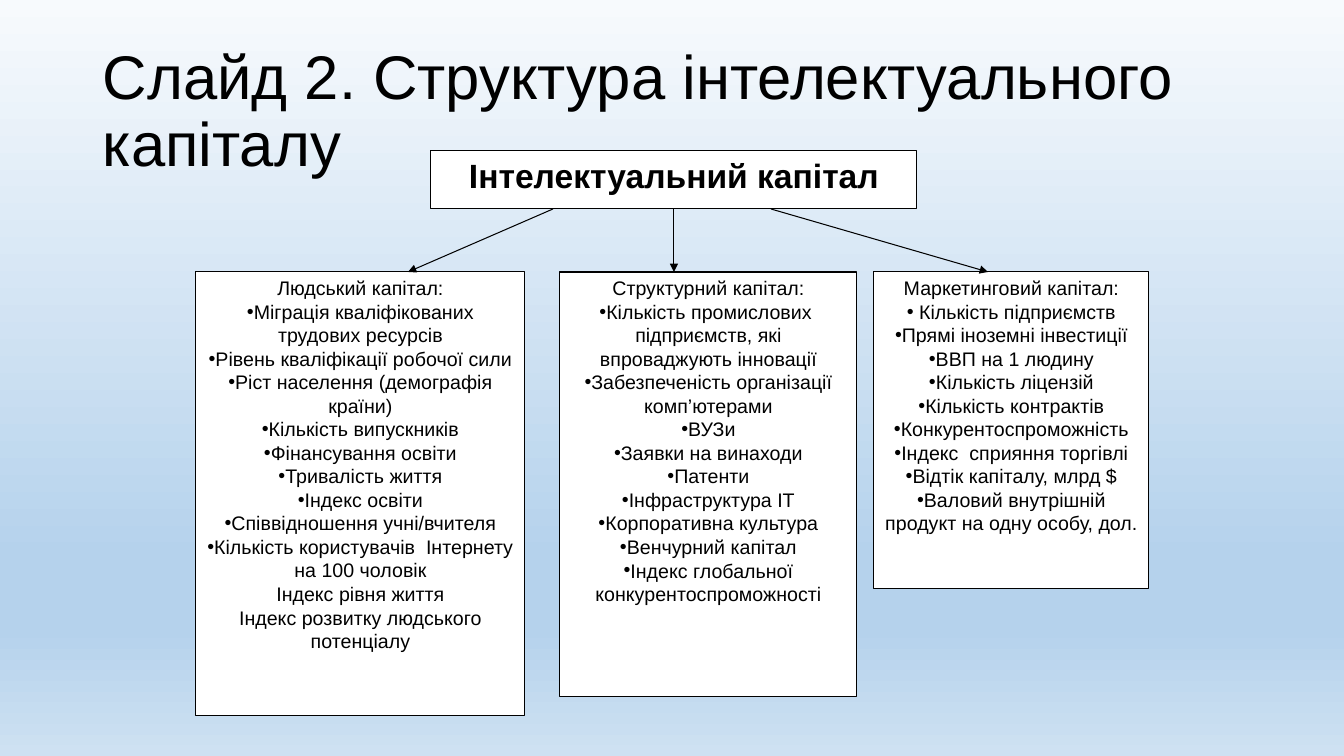
from dataclasses import dataclass

from lxml import etree
from pptx import Presentation
from pptx.dml.color import RGBColor
from pptx.enum.dml import MSO_THEME_COLOR
from pptx.enum.shapes import MSO_CONNECTOR, MSO_SHAPE
from pptx.enum.text import MSO_ANCHOR, PP_ALIGN
from pptx.oxml.ns import qn
from pptx.shapes.autoshape import Shape
from pptx.shapes.connector import Connector
from pptx.slide import Slide
from pptx.text.text import _Paragraph as Paragraph
from pptx.util import Emu, Pt

RECTANGLE = MSO_SHAPE.RECTANGLE
STRAIGHT = MSO_CONNECTOR.STRAIGHT
CENTER, LEFT = PP_ALIGN.CENTER, PP_ALIGN.LEFT
TOP, MIDDLE = MSO_ANCHOR.TOP, MSO_ANCHOR.MIDDLE
BOTTOM_SITE = 2

EMU_PER_PX = 914400 / 100.8
FONT = "Arial"
COLORS = {
    "ink": "000000",
    "box": "FFFFFF",
    "sky_top": "F7FAFD",
    "sky_deep": "B5D2EC",
    "sky_bottom": "CEE1F2",
}
BACKGROUND_STOPS = [(0, "sky_top"), (74, "sky_deep"), (83, "sky_deep"), (100, "sky_bottom")]

ROOT_TOP, ROOT_HEIGHT = 151, 58
ROOT_BOTTOM = ROOT_TOP + ROOT_HEIGHT
BRANCH_TOP = 272


@dataclass(frozen=True)
class Branch:
    """A kind of capital: its box, the arrow leading to it and its indicators."""
    left: int
    width: int
    height: int
    arrow_from: int
    arrow_to: int
    heading: str
    bullets: list[str]
    plain: tuple[str, ...] = ()


BRANCHES = [
    Branch(196, 329, 444, 553, 408, "Людський капітал:", [
        "Міграція кваліфікованих трудових ресурсів",
        "Рівень кваліфікації робочої сили",
        "Ріст населення (демографія країни)",
        "Кількість випускників",
        "Фінансування освіти",
        "Тривалість життя",
        "Індекс освіти",
        "Співвідношення учні/вчителя",
        "Кількість користувачів  Інтернету на 100 чоловік",
    ], ("Індекс рівня життя", "Індекс розвитку людського\vпотенціалу")),
    Branch(560, 297, 425, 674, 674, "Структурний капітал:", [
        "Кількість промислових  підприємств, які впроваджують інновації",
        "Забезпеченість організації комп’ютерами",
        "ВУЗи",
        "Заявки на винаходи",
        "Патенти",
        "Інфраструктура ІТ",
        "Корпоративна культура",
        "Венчурний капітал",
        "Індекс глобальної\vконкурентоспроможності",
    ]),
    Branch(874, 275, 317, 771, 988, "Маркетинговий капітал:", [
        " Кількість підприємств",
        "Прямі іноземні інвестиції",
        "ВВП на 1 людину",
        "Кількість ліцензій",
        "Кількість контрактів",
        "Конкурентоспроможність",
        "Індекс  сприяння торгівлі",
        "Відтік капіталу, млрд $",
        "Валовий внутрішній продукт на одну особу, дол.",
    ]),
]


def px(length: int) -> Emu:
    return Emu(round(length * EMU_PER_PX))


def color(name: str) -> RGBColor:
    return RGBColor.from_string(COLORS[name])


def paint_background(slide: Slide) -> None:
    fill = slide.background.fill
    fill.gradient()
    fill.gradient_angle = 270
    stop_list = next(slide.element.iter(qn("a:gsLst")))
    for stop in list(stop_list):
        stop_list.remove(stop)
    for percent, name in BACKGROUND_STOPS:
        stop = etree.SubElement(stop_list, qn("a:gs"), pos=str(percent * 1000))
        etree.SubElement(stop, qn("a:srgbClr"), val=COLORS[name])


def add_bullet(paragraph: Paragraph) -> None:
    properties = paragraph._p.get_or_add_pPr()
    properties.set("marL", "0")
    properties.set("indent", "0")
    etree.SubElement(properties, qn("a:buFont"), typeface=FONT)
    etree.SubElement(properties, qn("a:buChar"), char="•")


def write(shape: Shape, lines: list[tuple[str, bool]], size: int,
          align: PP_ALIGN = CENTER, bold: bool = False) -> None:
    """Fill the shape with (text, has bullet) lines."""
    frame = shape.text_frame
    frame.word_wrap = True
    for index, (text, bulleted) in enumerate(lines):
        paragraph = frame.paragraphs[0] if index == 0 else frame.add_paragraph()
        paragraph.text = text
        if bulleted:
            add_bullet(paragraph)
        paragraph.alignment = align
        font = paragraph.font
        font.name, font.size, font.bold = FONT, Pt(size), bold
        font.color.rgb = color("ink")


def add_title(slide: Slide, text: str) -> None:
    title = slide.shapes.add_textbox(px(93), px(40), px(1159), px(146))
    write(title, [(text, False)], 44, LEFT)
    title.text_frame.vertical_anchor = MIDDLE
    title.text_frame.paragraphs[0].line_spacing = 0.9


def add_box(slide: Slide, left: int, top: int, width: int, height: int) -> Shape:
    box = slide.shapes.add_shape(RECTANGLE, px(left), px(top), px(width), px(height))
    box.shadow.inherit = False
    box.fill.solid()
    box.fill.fore_color.rgb = color("box")
    box.line.color.rgb = color("ink")
    box.line.width = Pt(0.75)
    frame = box.text_frame
    frame.vertical_anchor = TOP
    frame.margin_left = frame.margin_right = px(9)
    frame.margin_top = frame.margin_bottom = px(4)
    return box


def add_arrow(slide: Slide, start: int, end: int) -> Connector:
    """Draw an arrow from the root box down to the row of branches."""
    arrow = slide.shapes.add_connector(
        STRAIGHT, px(start), px(ROOT_BOTTOM), px(end), px(BRANCH_TOP))
    arrow.line.color.rgb = color("ink")
    arrow.line.width = Pt(0.75)
    etree.SubElement(arrow.line._get_or_add_ln(), qn("a:tailEnd"), type="triangle")
    etree.SubElement(arrow._element.spPr, qn("a:effectLst"))
    return arrow


def main() -> None:
    presentation = Presentation()
    presentation.slide_width, presentation.slide_height = px(1344), px(756)
    slide = presentation.slides.add_slide(presentation.slide_layouts[6])
    paint_background(slide)
    add_title(slide, "Слайд 2. Структура інтелектуального капіталу")

    root = add_box(slide, 431, ROOT_TOP, 486, ROOT_HEIGHT)
    write(root, [("Інтелектуальний капітал", False)], 24, bold=True)
    root_middle = 431 + 486 // 2

    for branch in BRANCHES:
        box = add_box(slide, branch.left, BRANCH_TOP, branch.width, branch.height)
        lines = [(branch.heading, False)]
        lines += [(text, True) for text in branch.bullets]
        lines += [(text, False) for text in branch.plain]
        write(box, lines, 14)
        arrow = add_arrow(slide, branch.arrow_from, branch.arrow_to)
        if branch.arrow_from == root_middle:
            arrow.begin_connect(root, BOTTOM_SITE)

    presentation.save("out.pptx")


if __name__ == "__main__":
    main()
